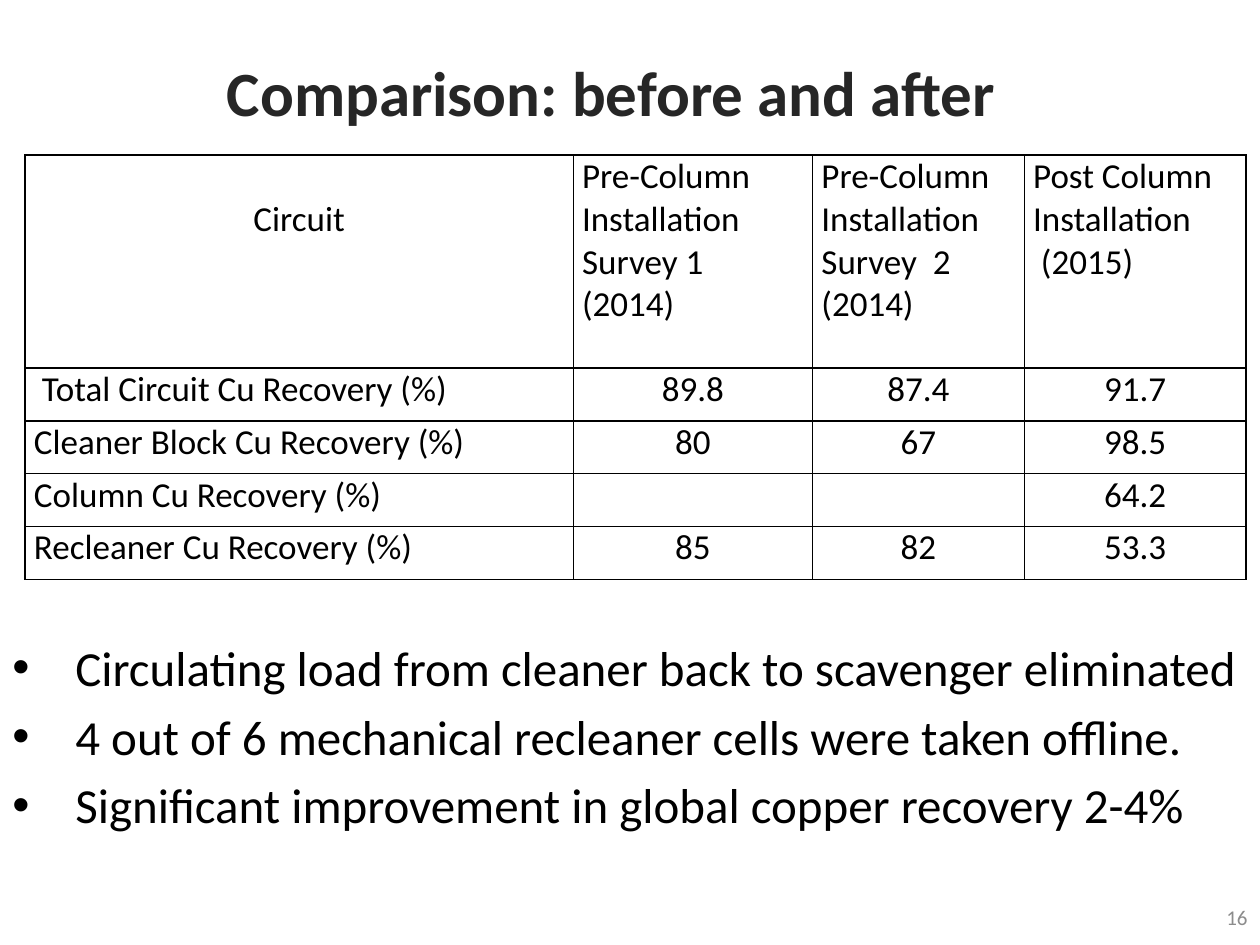
import pptx
import pptx.util
import pptx.dml.color
import pptx.enum.text
import pptx.oxml.ns
import lxml.etree
from dataclasses import dataclass

Inches, Pt = pptx.util.Inches, pptx.util.Pt
ALIGN = pptx.enum.text.PP_ALIGN
ANCHOR = pptx.enum.text.MSO_ANCHOR
qn = pptx.oxml.ns.qn


@dataclass
class Theme:
    font: str = "Calibri"
    title_color: str = "262626"
    text_color: str = "000000"
    number_color: str = "8C8C8C"
    title_size: int = 36
    body_size: int = 28
    table_size: int = 20
    number_size: int = 12


theme = Theme()


def style(paragraph, size, color, align=ALIGN.LEFT, bold=False):
    paragraph.alignment = align
    paragraph.font.name = theme.font
    paragraph.font.size = Pt(size)
    paragraph.font.bold = bold
    paragraph.font.color.rgb = pptx.dml.color.RGBColor.from_string(color)


def add_text(left, top, width, height, anchor):
    frame = slide.shapes.add_textbox(
        Inches(left), Inches(top), Inches(width), Inches(height)).text_frame
    frame.word_wrap = True
    frame.vertical_anchor = anchor
    return frame


prs = pptx.Presentation()
prs.slide_width, prs.slide_height = Inches(10), Inches(7.5)
slide = prs.slides.add_slide(prs.slide_layouts[6])

# Title
title = add_text(0.35, 0.38, 9, 0.69, ANCHOR.MIDDLE)
title.text = "Comparison: before and after"
style(title.paragraphs[0], theme.title_size, theme.title_color, ALIGN.CENTER, True)

# Recovery table
recovery_rows = [
    ["Circuit",
     "Pre-Column Installation Survey 1\n(2014)",
     "Pre-Column Installation Survey  2\n(2014)",
     "Post Column Installation\n (2015)"],
    [" Total Circuit Cu Recovery (%)", "89.8", "87.4", "91.7"],
    ["Cleaner Block Cu Recovery (%)", "80", "67", "98.5"],
    ["Column Cu Recovery (%)", "", "", "64.2"],
    ["Recleaner Cu Recovery (%)", "85", "82", "53.3"],
]
column_widths = [4.35, 1.9, 1.68, 1.76]
row_heights = [1.69] + [0.42] * 4
recovery = slide.shapes.add_table(
    len(row_heights), len(column_widths), Inches(0.2), Inches(1.23),
    Inches(sum(column_widths)), Inches(sum(row_heights))).table
for column, width in zip(recovery.columns, column_widths):
    column.width = Inches(width)
for row, height in zip(recovery.rows, row_heights):
    row.height = Inches(height)

for r, row_texts in enumerate(recovery_rows):
    for c, cell_text in enumerate(row_texts):
        cell = recovery.cell(r, c)
        cell.text = cell_text
        cell.margin_left = cell.margin_right = Inches(0.07)
        # "Circuit" sits one line lower than the other headings
        cell.margin_top = Inches(0.34 if r == c == 0 else 0)
        cell.margin_bottom = 0
        centred = (r == 0) == (c == 0)
        for paragraph in cell.text_frame.paragraphs:
            style(paragraph, theme.table_size, theme.text_color,
                  ALIGN.CENTER if centred else ALIGN.LEFT)
        cell_properties = cell._tc.get_or_add_tcPr()
        for side in ("lnL", "lnR", "lnT", "lnB"):
            border = lxml.etree.SubElement(cell_properties, qn(f"a:{side}"), w=str(Pt(1)))
            line_fill = lxml.etree.SubElement(border, qn("a:solidFill"))
            lxml.etree.SubElement(line_fill, qn("a:srgbClr"), val=theme.text_color)
        cell.fill.background()

# Findings
findings = [
    "Circulating load from cleaner back to scavenger eliminated",
    "4 out of 6 mechanical recleaner cells were taken offline.",
    "Significant improvement in global copper recovery 2-4%",
]
findings_frame = add_text(0, 5.01, 10, 1.8, ANCHOR.TOP)
findings_frame.text = "\n".join(findings)
for i, paragraph in enumerate(findings_frame.paragraphs):
    properties = paragraph._p.get_or_add_pPr()
    properties.set("marL", str(Inches(0.5)))
    properties.set("indent", str(-Inches(0.5)))
    lxml.etree.SubElement(properties, qn("a:buFont"), typeface="Arial")
    lxml.etree.SubElement(properties, qn("a:buChar"), char="•")
    style(paragraph, theme.body_size, theme.text_color)
    if i:
        paragraph.space_before = Pt(theme.body_size * 0.2)

# Slide number
number = add_text(7.67, 7.08, 2.33, 0.4, ANCHOR.MIDDLE)
number.text = "16"
style(number.paragraphs[0], theme.number_size, theme.number_color, ALIGN.RIGHT)

prs.save("out.pptx")
